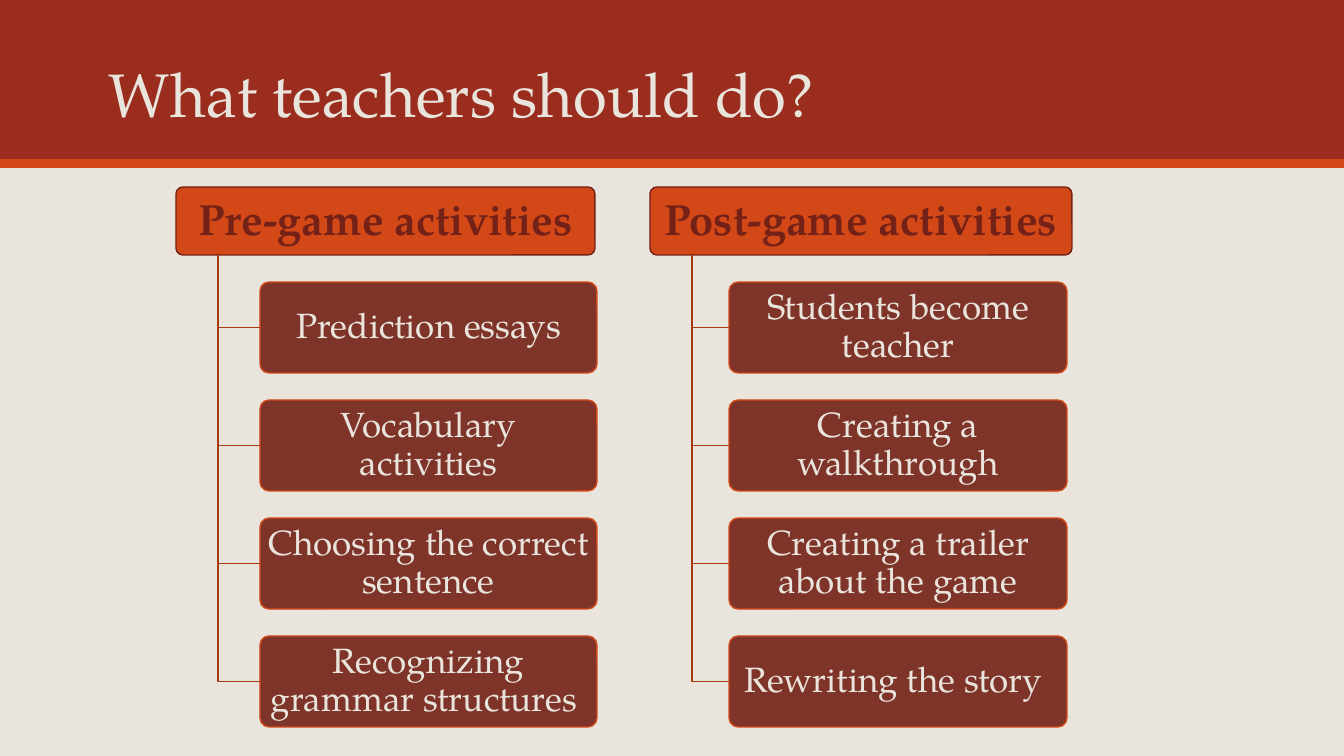
import pptx
import pptx.util
import pptx.dml.color
import pptx.enum.shapes
import pptx.enum.text
import pptx.oxml.ns
import lxml.etree

RGB = pptx.dml.color.RGBColor
KIND = pptx.enum.shapes.MSO_SHAPE
ANCHOR = pptx.enum.text.MSO_ANCHOR
ALIGN = pptx.enum.text.PP_ALIGN

TITLE = "What teachers should do?"
# heading, (left, width) of the heading, (left, width) of the items, stem x, items
TREES = [
    ("Pre-game activities", (176, 419), (260, 337), 218,
     ["Prediction essays", "Vocabulary activities",
      "Choosing the correct sentence", "Recognizing grammar structures "]),
    ("Post-game activities", (650, 422), (729, 338), 692,
     ["Students become teacher", "Creating a walkthrough",
      "Creating a trailer about the game", "Rewriting the story "]),
]

FONT = "TeX Gyre Pagella"
CREAM = RGB(0xE9, 0xE5, 0xDC)
BRICK = RGB(0x9B, 0x2D, 0x1F)
ORANGE = RGB(0xD3, 0x48, 0x17)
MAROON = RGB(0x74, 0x21, 0x17)
RUST = RGB(0xA9, 0x3A, 0x12)

WIDE, HIGH = 1344, 756
HEAD_TOP, HEAD_HIGH = 187, 68
ITEM_TOP, ITEM_HIGH, STEP = 282, 91, 118


def px(n):
    return pptx.util.Emu(round(n * 914400 / 100.8))


def write(shape, text, size, color, bold=False):
    frame = shape.text_frame
    frame.word_wrap = True
    frame.text = text
    para = frame.paragraphs[0]
    para.line_spacing = 0.9
    font = para.runs[0].font
    font.name, font.size, font.bold = FONT, pptx.util.Pt(size), bold
    font.color.rgb = color
    return frame


def block(kind, left, top, width, height, fill, line=None):
    """Draw a filled shape, outlined only if a line colour is given."""
    shape = slide.shapes.add_shape(kind, px(left), px(top), px(width), px(height))
    shape.shadow.inherit = False
    shape.fill.solid()
    shape.fill.fore_color.rgb = fill
    if line is None:
        shape.line.fill.background()
    else:
        shape.line.color.rgb = line
        shape.line.width = pptx.util.Pt(1)
    return shape


def card(box, fill, line, text, size, color, pad, bold=False):
    """Draw a rounded box with centred text."""
    shape = block(KIND.ROUNDED_RECTANGLE, *box, fill, line)
    shape.adjustments[0] = 0.1
    frame = write(shape, text, size, color, bold)
    frame.margin_left = frame.margin_right = px(pad)
    frame.margin_top = frame.margin_bottom = px(pad - 2)
    frame.vertical_anchor = ANCHOR.MIDDLE
    frame.paragraphs[0].alignment = ALIGN.CENTER
    return shape


def fade(shape, percent):
    """Set the opacity of a solid fill."""
    color = shape.fill._xPr.find(".//" + pptx.oxml.ns.qn("a:srgbClr"))
    alpha = lxml.etree.SubElement(color, pptx.oxml.ns.qn("a:alpha"))
    alpha.set("val", str(percent * 1000))


def branch(stem, top, right, mid):
    """Draw the elbow line from a heading to an item."""
    path = slide.shapes.build_freeform(px(stem), px(top))
    path.add_line_segments([(px(stem), px(mid)), (px(right), px(mid))], close=False)
    elbow = path.convert_to_shape()
    elbow.shadow.inherit = False
    elbow.fill.background()
    elbow.line.color.rgb = RUST
    elbow.line.width = pptx.util.Pt(1)


deck = pptx.Presentation()
deck.slide_width, deck.slide_height = px(WIDE), px(HIGH)
slide = deck.slides.add_slide(deck.slide_layouts[6])
slide.background.fill.solid()
slide.background.fill.fore_color.rgb = CREAM

for top, height, fill in [(0, 151, BRICK), (151, 9, BRICK), (159, 9, ORANGE)]:
    block(KIND.RECTANGLE, 0, top, WIDE, height, fill)

title = slide.shapes.add_textbox(px(99), px(22), px(1342), px(114))
write(title, TITLE, 44, CREAM).vertical_anchor = ANCHOR.BOTTOM

for name, (left, width), (inner, span), stem, items in TREES:
    card((left, HEAD_TOP, width, HEAD_HIGH), ORANGE, MAROON, name, 31, MAROON, 6, True)
    for i, item in enumerate(items):
        top = ITEM_TOP + i * STEP
        branch(stem, HEAD_TOP + HEAD_HIGH, inner, top + ITEM_HIGH / 2)
        box = card((inner, top, span, ITEM_HIGH), MAROON, ORANGE, item, 25, CREAM, 5)
        fade(box, 90)

deck.save("out.pptx")
